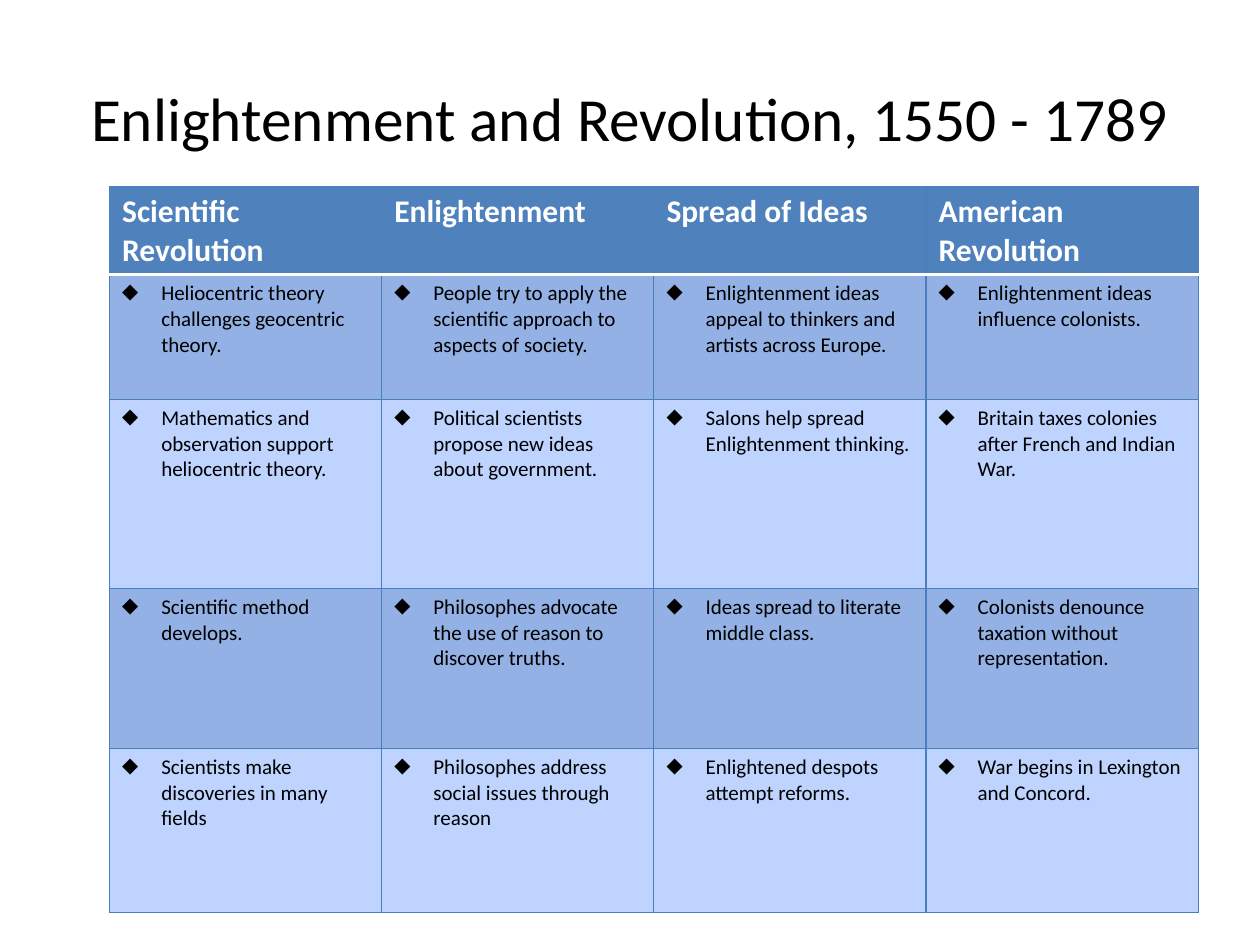
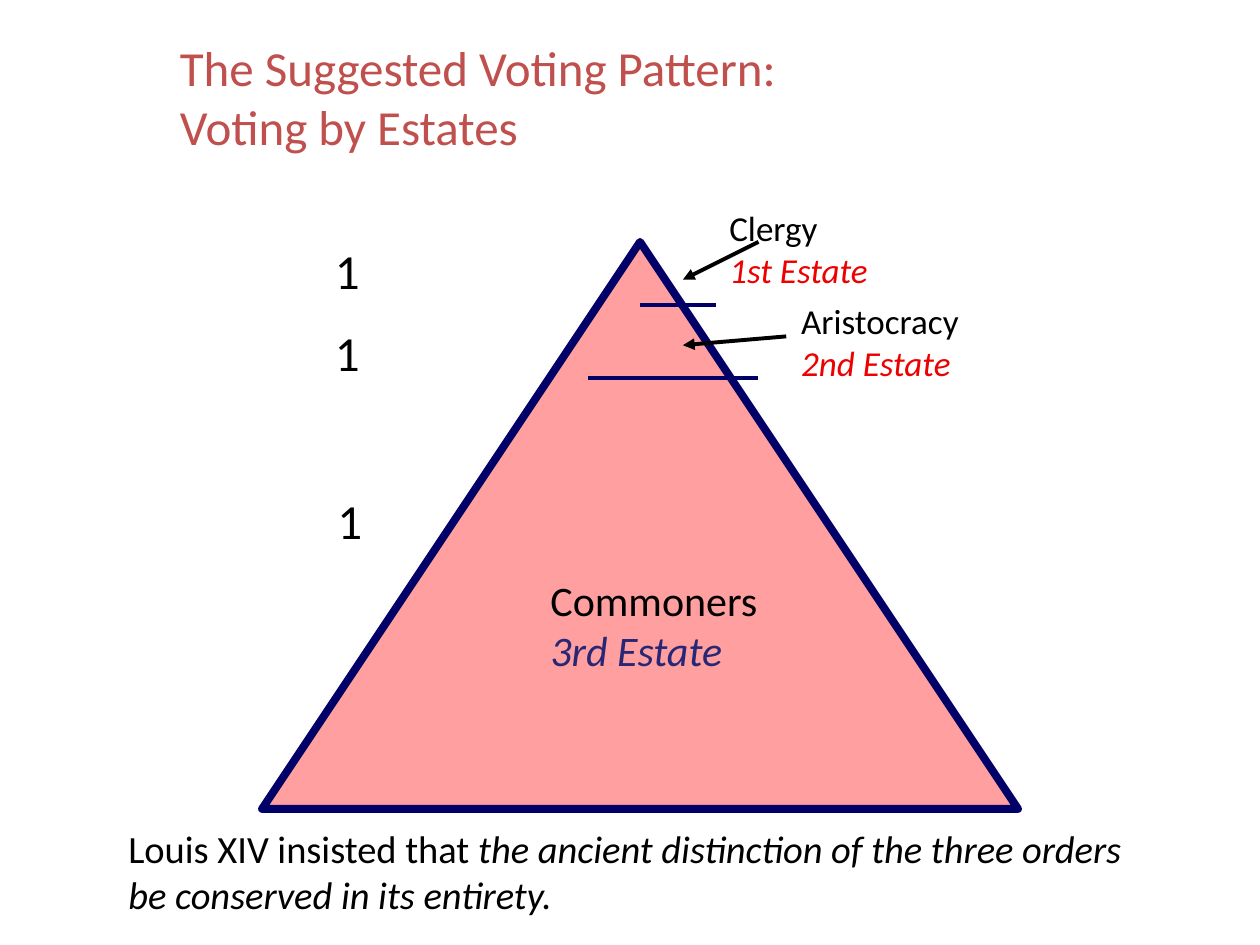
from lxml import etree
from pptx import Presentation
from pptx.dml.color import RGBColor
from pptx.enum.shapes import MSO_CONNECTOR, MSO_SHAPE
from pptx.enum.text import MSO_ANCHOR, PP_ALIGN
from pptx.oxml.ns import qn
from pptx.util import Inches, Pt

STRAIGHT = MSO_CONNECTOR.STRAIGHT
TRIANGLE = MSO_SHAPE.ISOSCELES_TRIANGLE
TOP, MIDDLE = MSO_ANCHOR.TOP, MSO_ANCHOR.MIDDLE
LEFT, CENTER = PP_ALIGN.LEFT, PP_ALIGN.CENTER

FONT = "Calibri"
COLORS = {
    "text": "000000",
    "white": "FFFFFF",
    "header": "4F81BD",
    "grid": "4B7EBC",
    "band_dark": "93B1E4",
    "band_light": "BFD3FF",
    "heading": "C0504D",
    "pyramid": "FF9F9F",
    "outline": "000066",
    "upper_estate": "EC0000",
    "third_estate": "272775",
}

TOPICS = ["Scientific Revolution", "Enlightenment", "Spread of Ideas", "American Revolution"]
EVENTS = [
    ["Heliocentric theory challenges geocentric theory.",
     "People try to apply the scientific approach to aspects of society.",
     "Enlightenment ideas appeal to thinkers and artists across Europe.",
     "Enlightenment ideas influence colonists."],
    ["Mathematics and observation support heliocentric theory.",
     "Political scientists propose new ideas about government.",
     "Salons help spread Enlightenment thinking.",
     "Britain taxes colonies after French and Indian War."],
    ["Scientific method develops.",
     "Philosophes advocate the use of reason to discover truths.",
     "Ideas spread to literate middle class.",
     "Colonists denounce taxation without representation."],
    ["Scientists make discoveries in many fields",
     "Philosophes address social issues through reason",
     "Enlightened despots attempt reforms.",
     "War begins in Lexington and Concord."],
]
ROW_HEIGHTS = [0.7, 0.99, 1.5, 1.27, 1.3]
COLUMN_WIDTH = 2.16


def rgb(name):
    return RGBColor.from_string(COLORS[name])


class Deck:
    def __init__(self):
        self.prs = Presentation()
        self.prs.slide_width, self.prs.slide_height = Inches(10), Inches(7.5)
        self.slide = None

    def new_slide(self):
        self.slide = self.prs.slides.add_slide(self.prs.slide_layouts[6])

    def style(self, paragraph, size, color="text", bold=False, italic=False):
        font = paragraph.font
        font.name, font.size, font.bold, font.italic = FONT, Pt(size), bold, italic
        font.color.rgb = rgb(color)

    def text(self, box, content, size, color="text", anchor=TOP, align=LEFT, wrap=True):
        """Add a text box with one paragraph and return its text frame."""
        frame = self.slide.shapes.add_textbox(*map(Inches, box)).text_frame
        frame.word_wrap, frame.vertical_anchor = wrap, anchor
        paragraph = frame.paragraphs[0]
        paragraph.text, paragraph.alignment = content, align
        self.style(paragraph, size, color)
        return frame

    def estate(self, box, people, rank, size, color, wrap=False):
        """Label an estate with its people and, below in italics, its rank."""
        rank_line = self.text(box, people, size, wrap=wrap).add_paragraph()
        rank_line.text = rank
        self.style(rank_line, size, color, italic=True)

    def triangle(self, box, fill, line, width):
        shape = self.slide.shapes.add_shape(TRIANGLE, *map(Inches, box))
        shape.shadow.inherit = False
        shape.fill.solid()
        shape.fill.fore_color.rgb = rgb(fill)
        shape.line.color.rgb = rgb(line)
        shape.line.width = Pt(width)

    def line(self, start, end, color, arrow=False):
        connector = self.slide.shapes.add_connector(STRAIGHT, *map(Inches, start + end))
        connector.line.color.rgb = rgb(color)
        connector.line.width = Pt(2.25)
        if arrow:
            etree.SubElement(connector.line._get_or_add_ln(), qn("a:tailEnd"), type="triangle")
        etree.SubElement(connector._element.spPr, qn("a:effectLst"))

    def border(self, cell, side, color, width):
        edge = etree.SubElement(cell._tc.get_or_add_tcPr(), qn(f"a:ln{side}"), w=str(Pt(width)))
        fill = etree.SubElement(edge, qn("a:solidFill"))
        etree.SubElement(fill, qn("a:srgbClr"), val=COLORS[color])

    def bullet(self, paragraph):
        properties = paragraph._p.get_or_add_pPr()
        indent = Inches(0.31)
        properties.set("marL", str(indent))
        properties.set("indent", str(-indent))
        etree.SubElement(properties, qn("a:buChar"), char="◆")

    def table(self, left, top, headings, body):
        rows = [headings] + body
        table = self.slide.shapes.add_table(
            len(rows), len(headings), Inches(left), Inches(top),
            Inches(COLUMN_WIDTH * len(headings)), Inches(sum(ROW_HEIGHTS))).table
        for column in table.columns:
            column.width = Inches(COLUMN_WIDTH)
        for r, entries in enumerate(rows):
            table.rows[r].height = Inches(ROW_HEIGHTS[r])
            for c, entry in enumerate(entries):
                self.cell(table.cell(r, c), r, entry)

    def cell(self, cell, row, entry):
        header_rule = {0: "B", 1: "T"}.get(row)
        for side in "LRTB":
            rule = ("white", 2) if side == header_rule else ("grid", 0.75)
            self.border(cell, side, *rule)
        cell.fill.solid()
        paragraph = cell.text_frame.paragraphs[0]
        paragraph.text = entry
        if row == 0:
            cell.fill.fore_color.rgb = rgb("header")
            self.style(paragraph, 18, "white", bold=True)
        else:
            cell.fill.fore_color.rgb = rgb("band_dark" if row % 2 else "band_light")
            self.bullet(paragraph)
            self.style(paragraph, 12)


def add_overview(deck):
    deck.new_slide()
    deck.text((0.5, 0.3, 9, 1.25), "Enlightenment and Revolution, 1550 - 1789", 35,
              anchor=MIDDLE, align=CENTER)
    deck.table(0.87, 1.48, TOPICS, EVENTS)


def add_voting_pattern(deck):
    deck.new_slide()
    deck.triangle((2.08, 1.92, 6, 4.5), "pyramid", "outline", 4.5)
    for left, right, y in [(4.67, 6.02, 3), (5.08, 5.68, 2.42)]:
        deck.line((left, y), (right, y), "outline")

    deck.estate((4.27, 4.51, 1.96, 0.9), "Commoners", "3rd Estate", 24, "third_estate")
    deck.estate((6.26, 2.33, 1.79, 0.77), "Aristocracy", "2nd Estate", 20, "upper_estate", wrap=True)
    deck.estate((5.69, 1.59, 1.64, 0.77), "Clergy", "1st Estate", 20, "upper_estate")
    for start, end in [((6.02, 1.92), (5.42, 2.22)), ((6.24, 2.67), (5.42, 2.74))]:
        deck.line(start, end, "text", arrow=True)

    deck.text((1.33, 0.25, 7.34, 1.04), "The Suggested Voting Pattern:\vVoting by Estates",
              28, "heading")
    for left, top in [(2.56, 1.86), (2.56, 2.51), (2.58, 3.84)]:
        deck.text((left, top, 0.44, 0.57), "1", 28, wrap=False)

    remark = deck.text((0.92, 6.5, 8.42, 0.83), "Louis XIV insisted that ", 22)
    quote = remark.paragraphs[0].add_run()
    quote.text = "the ancient distinction of the three orders be conserved in its entirety."
    quote.font.italic = True


def main():
    deck = Deck()
    add_overview(deck)
    add_voting_pattern(deck)
    deck.prs.save("out.pptx")


if __name__ == "__main__":
    main()
